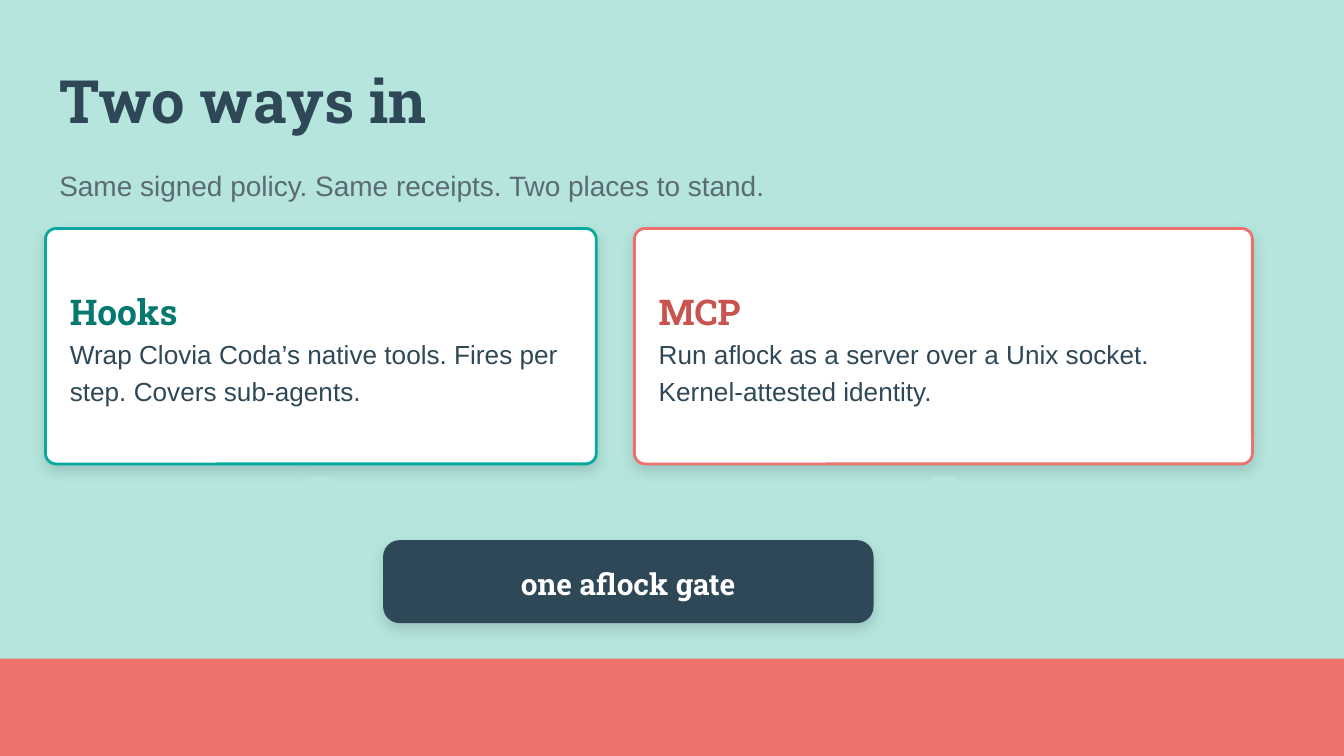
from dataclasses import dataclass

from lxml import etree
from pptx import Presentation
from pptx.dml.color import RGBColor
from pptx.enum.shapes import MSO_SHAPE
from pptx.enum.text import MSO_ANCHOR, MSO_AUTO_SIZE, PP_ALIGN
from pptx.oxml import parse_xml
from pptx.oxml.ns import nsdecls, qn
from pptx.util import Cm, Pt

RECT, ROUND, DOWN = MSO_SHAPE.RECTANGLE, MSO_SHAPE.ROUNDED_RECTANGLE, MSO_SHAPE.DOWN_ARROW
TOP, MIDDLE = MSO_ANCHOR.TOP, MSO_ANCHOR.MIDDLE
LEFT, CENTER = PP_ALIGN.LEFT, PP_ALIGN.CENTER
GROW = MSO_AUTO_SIZE.SHAPE_TO_FIT_TEXT

SLAB, SANS = "Roboto Slab", "Arial"
MINT, CORAL, NAVY, WHITE = "B5E5DC", "ED716C", "2F4858", "FFFFFF"
TEXT_MARGIN = 0.21  # from a panel's edge to its text box, cm


@dataclass
class Line:
    text: str
    font: str
    size: float
    color: str
    bold: bool = False
    spacing: float = 1.0
    align: PP_ALIGN = LEFT


@dataclass
class Panel:
    left: float
    top: float
    width: float
    height: float
    text_height: float
    corner: float
    fill: str
    lines: list[Line]
    border: str | None = None


def rgb(color: str) -> RGBColor:
    return RGBColor.from_string(color)


def place(sp, left: float, top: float, width: float, height: float) -> None:
    box = {"left": left, "top": top, "width": width, "height": height}
    for name, value in box.items():
        setattr(sp, name, Cm(value))


def write(tf, lines: list[Line], inset: float, anchor: MSO_ANCHOR) -> None:
    frame = {"word_wrap": True, "auto_size": GROW, "vertical_anchor": anchor}
    frame |= {f"margin_{side}": Cm(inset) for side in ("left", "top", "right", "bottom")}
    for name, value in frame.items():
        setattr(tf, name, value)
    for i, line in enumerate(lines):
        p = tf.paragraphs[0] if i == 0 else tf.add_paragraph()
        layout = {"alignment": line.align, "line_spacing": line.spacing, "space_before": Pt(0)}
        for name, value in layout.items():
            setattr(p, name, value)
        r = p.add_run()
        r.text = line.text
        style = {"name": line.font, "size": Pt(line.size), "bold": line.bold}
        for name, value in style.items():
            setattr(r.font, name, value)
        r.font.color.rgb = rgb(line.color)


def add_shape(shapes, kind: MSO_SHAPE, box: tuple, fill: str, border: str | None = None):
    sp = shapes.add_shape(kind, *map(Cm, box))
    sp.shadow.inherit = False
    sp.fill.solid()
    sp.fill.fore_color.rgb = rgb(fill)
    if border:
        sp.line.color.rgb = rgb(border)
        sp.line.width = Pt(1.5)
    else:
        sp.line.fill.background()
    return sp


def add_soft_shadow(sp) -> None:
    effects = sp._element.spPr.find(qn("a:effectLst"))
    effects.append(parse_xml(
        f'<a:outerShdw {nsdecls("a")} blurRad="{Pt(7)}" dist="{Pt(3)}" dir="5400000" '
        f'algn="ctr" rotWithShape="0"><a:srgbClr val="{NAVY}">'
        '<a:alpha val="20000"/></a:srgbClr></a:outerShdw>'))


def add_panel(s, panel: Panel) -> None:
    shapes = s.shapes.add_group_shape().shapes
    box = (panel.left, panel.top, panel.width, panel.height)
    sp = add_shape(shapes, ROUND, box, panel.fill, panel.border)
    sp.adjustments[0] = panel.corner
    add_soft_shadow(sp)
    tb = shapes.add_textbox(
        Cm(panel.left + TEXT_MARGIN),
        Cm(panel.top + (panel.height - panel.text_height) / 2),
        Cm(panel.width - 2 * TEXT_MARGIN), Cm(panel.text_height))
    write(tb.text_frame, panel.lines, 0.25, MIDDLE)


def card(left: float, width: float, border: str, accent: str, head: str, body: str) -> Panel:
    lines = [Line(head, SLAB, 19, accent, True, 1.1), Line(body, SANS, 14, NAVY, spacing=1.18)]
    return Panel(left, 4.32, width, 4.45, 2.77, 0.045, WHITE, lines, border)


CARDS = [
    card(0.86, 10.41, "07A89D", "05796F", "Hooks",
         "Wrap Clovia Coda’s native tools. Fires per step. Covers sub-agents."),
    card(11.99, 11.68, CORAL, "C9534E", "MCP",
         "Run aflock as a server over a Unix socket. Kernel-attested identity."),
]
GATE = Panel(7.24, 10.21, 9.27, 1.57, 1.17, 0.2, NAVY,
             [Line("one aflock gate", SLAB, 16, WHITE, True, 1.1, CENTER)])


def main() -> None:
    prs = Presentation()
    prs.slide_width, prs.slide_height = Cm(25.4), Cm(14.29)
    s = prs.slides.add_slide(prs.slide_layouts[1])

    # Background and bottom band
    s.background.fill.solid()
    s.background.fill.fore_color.rgb = rgb(MINT)
    add_shape(s.shapes, RECT, (0, 12.45, 25.4, 1.84), CORAL)

    # Title and subtitle
    title, subtitle = s.shapes.title, s.placeholders[1]
    place(title, 0.99, 1.07, 23.42, 1.6)
    write(title.text_frame, [Line("Two ways in", SLAB, 32, NAVY, True)], 0.13, TOP)
    place(subtitle, 0.99, 3, 21.34, 0.86)
    pPr = subtitle.text_frame.paragraphs[0]._p.get_or_add_pPr()
    pPr.set("marL", "0")
    pPr.set("indent", "0")
    etree.SubElement(pPr, qn("a:buNone"))
    write(subtitle.text_frame,
          [Line("Same signed policy. Same receipts. Two places to stand.",
                SANS, 15, "5B6B75", spacing=1.1)], 0.13, TOP)

    # Two cards, each with an arrow below its middle
    for panel in CARDS:
        add_panel(s, panel)
    for panel in CARDS:
        middle = panel.left + panel.width / 2
        add_shape(s.shapes, DOWN, (middle - 0.43, 9.02, 0.86, 1.27), MINT)

    # Shared gate
    add_panel(s, GATE)

    prs.save("out.pptx")


if __name__ == "__main__":
    main()
